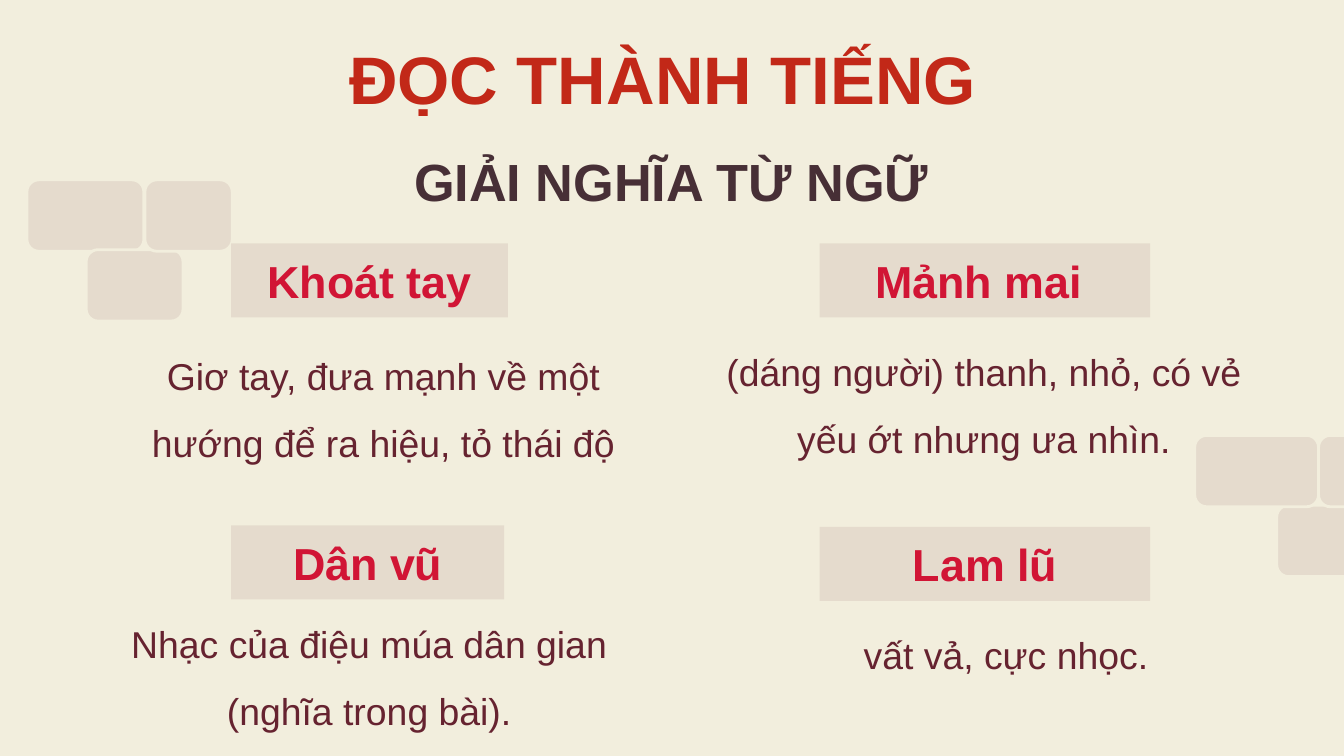
"""Build a Vietnamese vocabulary slide with four terms and their meanings."""
import pptx
import pptx.util
import pptx.dml.color
import pptx.enum.shapes
import pptx.enum.text
import pptx.oxml
import pptx.oxml.ns

Cm = pptx.util.Cm
Shape = pptx.enum.shapes.MSO_SHAPE
Anchor = pptx.enum.text.MSO_ANCHOR

COLORS = {
    "background": "F2EEDD",
    "wine": "662330",
    "term": "D11535",
    "title": "C22818",
    "subtitle": "472F36",
}
TINT_PERCENT = 9
BRICK_HEIGHT = 1.35
TERM_HEIGHT = 1.4
WIDE_INSET = 0.25
NARROW_INSET = 0.13

BRICKS = [
    (0.51, 3.4, 2.21),
    (1.63, 4.72, 1.83),
    (2.74, 3.4, 1.65),
    (24.13, 9.55, 2.21),
    (24.92, 8.23, 1.83),
    (22.58, 8.23, 2.34),
]
TERMS = [
    ("Khoát tay", 4.37, 4.6, 5.23),
    ("Mảnh mai ", 15.49, 4.6, 6.25),
    ("Dân vũ", 4.37, 9.93, 5.16),
    ("Lam lũ", 15.49, 9.96, 6.25),
]
HEADINGS = [
    ("ĐỌC THÀNH TIẾNG", (3.38, 0.46, 18.29, 2.24), 36, "title", Anchor.TOP, 1),
    ("GIẢI NGHĨA TỪ NGỮ", (4.24, 2.74, 16.89, 0.76), 28, "subtitle", Anchor.MIDDLE, 1.5),
]
MEANINGS = [
    ("Giơ tay, đưa mạnh về một hướng để ra hiệu, tỏ thái độ",
     (2.08, 6.12, 10.34, 2.67), Anchor.TOP, 1.5, NARROW_INSET),
    ("(dáng người) thanh, nhỏ, có vẻ yếu ớt nhưng ưa nhìn.",
     (13.28, 6.05, 10.64, 2.82), Anchor.TOP, 1.5, NARROW_INSET),
    ("Nhạc của điệu múa dân gian (nghĩa trong bài).",
     (2.08, 11.18, 9.8, 2.67), Anchor.TOP, 1.5, NARROW_INSET),
    ("vất vả, cực nhọc.",
     (14.8, 11.96, 8.43, 1.09), Anchor.BOTTOM, 1, WIDE_INSET),
]


def color(name):
    return pptx.dml.color.RGBColor.from_string(COLORS[name])


def add_tinted_shape(slide, kind, box):
    shape = slide.shapes.add_shape(kind, *map(Cm, box))
    shape.shadow.inherit = False
    shape.fill.solid()
    shape.fill.fore_color.rgb = color("wine")
    fill_color = shape.fill._xPr.find(".//" + pptx.oxml.ns.qn("a:srgbClr"))
    alpha = pptx.oxml.parse_xml(
        f'<a:alpha {pptx.oxml.ns.nsdecls("a")} val="{TINT_PERCENT * 1000}"/>')
    fill_color.append(alpha)
    return shape


def write_text(shape, text, size, color_name, bold=False, anchor=Anchor.MIDDLE,
               spacing=1, inset=WIDE_INSET):
    frame = shape.text_frame
    frame.word_wrap = True
    frame.vertical_anchor = anchor
    frame.margin_left = frame.margin_right = Cm(0.25)
    frame.margin_top = frame.margin_bottom = Cm(inset)
    paragraph = frame.paragraphs[0]
    paragraph.text = text
    paragraph.alignment = pptx.enum.text.PP_ALIGN.CENTER
    paragraph.line_spacing = float(spacing)
    paragraph.font.name = "Arial"
    paragraph.font.size = pptx.util.Pt(size)
    paragraph.font.bold = bold
    paragraph.font.color.rgb = color(color_name)


def main():
    presentation = pptx.Presentation()
    presentation.slide_width = Cm(25.4)
    presentation.slide_height = Cm(14.29)
    slide = presentation.slides.add_slide(presentation.slide_layouts[6])
    slide.background.fill.solid()
    slide.background.fill.fore_color.rgb = color("background")

    for left, top, width in BRICKS:
        brick = add_tinted_shape(
            slide, Shape.ROUNDED_RECTANGLE, (left, top, width, BRICK_HEIGHT))
        brick.line.color.rgb = color("background")
        brick.line.width = pptx.util.Pt(1.5)

    for text, left, top, width in TERMS:
        label = add_tinted_shape(
            slide, Shape.RECTANGLE, (left, top, width, TERM_HEIGHT))
        label.line.fill.background()
        write_text(label, text, 24, "term", bold=True)

    for text, box, size, color_name, anchor, spacing in HEADINGS:
        heading = slide.shapes.add_textbox(*map(Cm, box))
        write_text(heading, text, size, color_name, True, anchor, spacing)

    for text, box, anchor, spacing, inset in MEANINGS:
        meaning = slide.shapes.add_textbox(*map(Cm, box))
        write_text(meaning, text, 20, "wine", False, anchor, spacing, inset)

    presentation.save("out.pptx")


if __name__ == "__main__":
    main()
